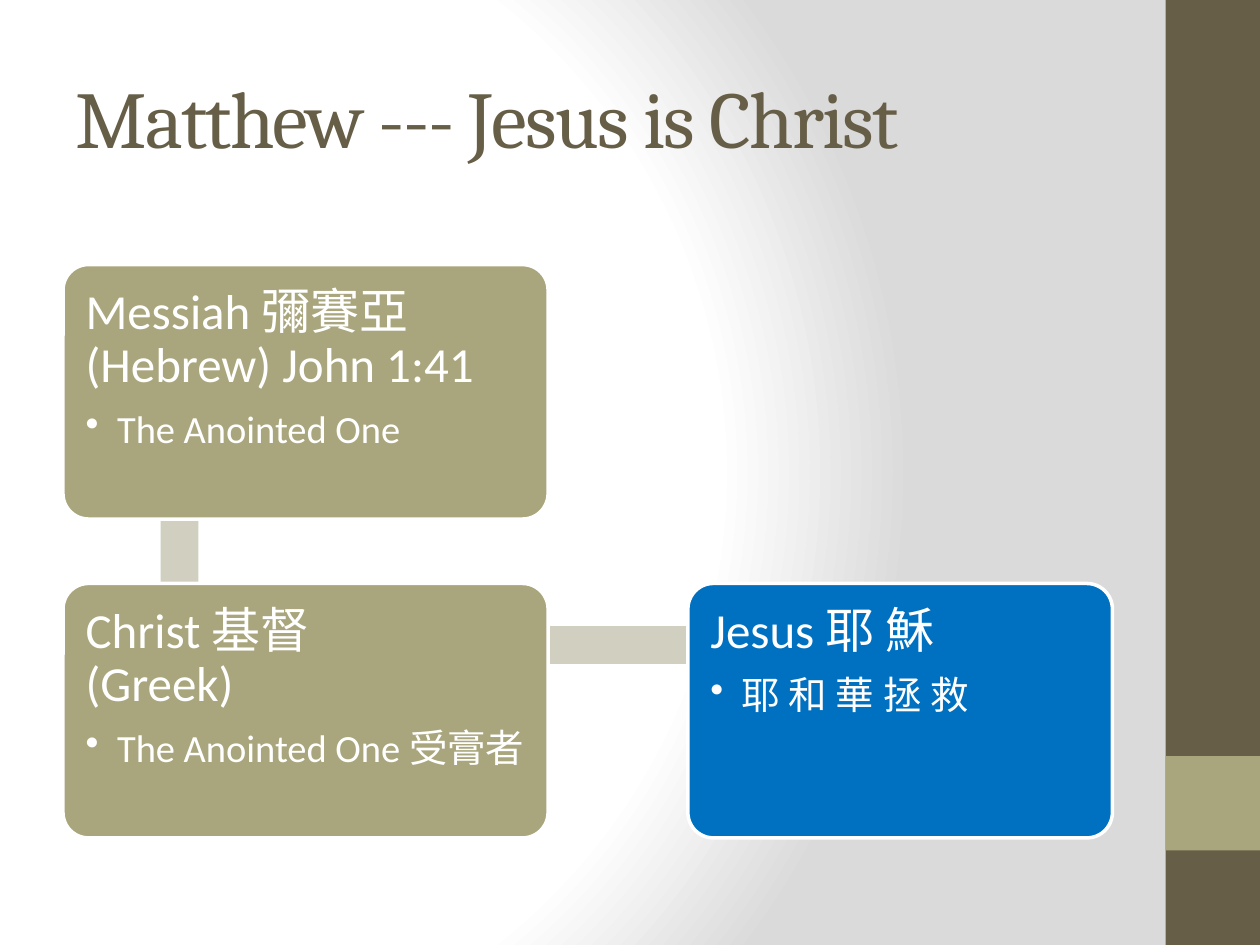
from lxml.etree import SubElement
from pptx import Presentation
from pptx.dml.color import RGBColor
from pptx.enum.shapes import MSO_SHAPE
from pptx.enum.text import MSO_ANCHOR, PP_ALIGN
from pptx.oxml import parse_xml
from pptx.oxml.ns import nsdecls, qn
from pptx.util import Pt

BROWN = RGBColor(0x67, 0x5E, 0x47)
OLIVE = RGBColor(0xA9, 0xA5, 0x7C)
PALE = RGBColor(0xD1, 0xCF, 0xBF)
BLUE = RGBColor(0x00, 0x70, 0xC0)
WHITE = RGBColor(0xFF, 0xFF, 0xFF)
GRAY = RGBColor(0xDA, 0xDA, 0xDA)

LEFT, TOP, LOW, RIGHT = 36, 151.2, 333.4, 393.1
WIDE, SLIM, HIGH = 277.2, 242.6, 145.4
THICK = 21.6

FRAME = {"word_wrap": True, "vertical_anchor": MSO_ANCHOR.TOP,
         "margin_left": Pt(8.64), "margin_right": Pt(8.64),
         "margin_top": Pt(8.64), "margin_bottom": Pt(8.64)}
HEAD = {"alignment": PP_ALIGN.LEFT, "line_spacing": 0.9, "space_after": Pt(9.8)}
ITEM = {**HEAD, "space_after": Pt(3.3)}


def apply(target, style):
    for key, value in style.items():
        setattr(target, key, value)


def paint(slide):
    stops = "".join(
        f'<a:gs pos="{pos * 1000}"><a:srgbClr val="{color}"/></a:gs>'
        for pos, color in [(0, WHITE), (75, WHITE), (100, GRAY)])
    back = parse_xml(
        f'<p:bg {nsdecls("p", "a")}><p:bgPr><a:gradFill rotWithShape="1">'
        f'<a:gsLst>{stops}</a:gsLst><a:path path="circle">'
        '<a:fillToRect l="20000" t="50000" r="100000" b="50000"/></a:path>'
        '</a:gradFill><a:effectLst/></p:bgPr></p:bg>')
    slide._element.cSld.insert(0, back)


def block(slide, box, color, kind=MSO_SHAPE.RECTANGLE, turn=0):
    shape = slide.shapes.add_shape(kind, *map(Pt, box))
    apply(shape, {"rotation": turn})
    shape.shadow.inherit = False
    shape.fill.solid()
    shape.fill.fore_color.rgb = color
    shape.line.fill.background()
    return shape


def write(par, text, style, size, color=WHITE, font="Calibri"):
    apply(par, {"text": text, **style})
    for run in par.runs:
        apply(run.font, {"size": Pt(size), "name": font})
        run.font.color.rgb = color


def card(slide, box, color, head, item):
    shape = block(slide, box, color, MSO_SHAPE.ROUNDED_RECTANGLE)
    shape.adjustments[0] = 0.1
    shape.line.color.rgb = WHITE
    shape.line.width = Pt(2)
    frame = shape.text_frame
    apply(frame, FRAME)
    write(frame.paragraphs[0], head, HEAD, 28)
    par = frame.add_paragraph()
    write(par, item, {"level": 1, **ITEM}, 22)
    props = par._p.get_or_add_pPr()
    props.set("marL", str(Pt(18)))
    props.set("indent", str(-Pt(18)))
    SubElement(props, qn("a:buChar")).set("char", "•")


def title(slide, text):
    shape = slide.shapes.title
    apply(shape, {"left": Pt(36), "top": Pt(21.6),
                  "width": Pt(600), "height": Pt(90)})
    apply(shape.text_frame, {"word_wrap": True,
                             "vertical_anchor": MSO_ANCHOR.MIDDLE})
    par = shape.text_frame.paragraphs[0]
    write(par, text, {"alignment": PP_ALIGN.LEFT}, 46, BROWN, "Cambria")
    par.runs[0]._r.get_or_add_rPr().set("spc", "-100")


def main():
    deck = Presentation()
    apply(deck, {"slide_width": Pt(720), "slide_height": Pt(540)})
    slide = deck.slides.add_slide(deck.slide_layouts[5])
    paint(slide)
    block(slide, (666, 0, 54, 540), BROWN)
    block(slide, (666, 432, 54, 54), OLIVE)
    title(slide, "Matthew --- Jesus is Christ")
    block(slide, (12.2, 267.1, 180.7, THICK), PALE, turn=90)
    card(slide, (LEFT, TOP, WIDE, HIGH), OLIVE,
         "Messiah 彌賽亞\v(Hebrew) John 1:41", "The Anointed One")
    block(slide, (103, 357.8, 339.1, THICK), PALE)
    card(slide, (LEFT, LOW, WIDE, HIGH), OLIVE,
         "Christ 基督\v(Greek)", "The Anointed One 受膏者")
    card(slide, (RIGHT, LOW, SLIM, HIGH), BLUE, "Jesus 耶 穌", "耶 和 華 拯 救")
    deck.save("out.pptx")


if __name__ == "__main__":
    main()
